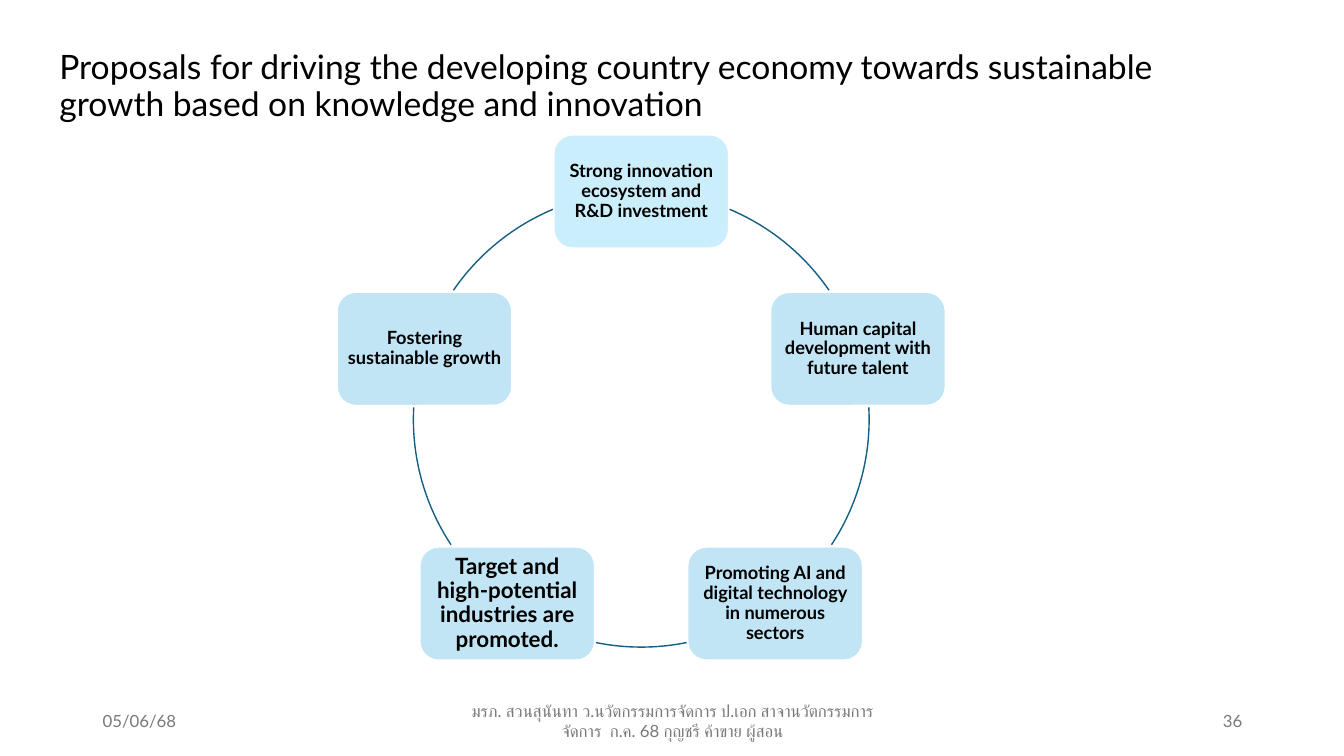
from dataclasses import dataclass
from math import cos, radians, sin

from pptx import Presentation
from pptx.dml.color import RGBColor
from pptx.enum.shapes import MSO_SHAPE
from pptx.enum.text import MSO_ANCHOR, PP_ALIGN
from pptx.util import Pt

ROUNDED, ARC = MSO_SHAPE.ROUNDED_RECTANGLE, MSO_SHAPE.ARC
MIDDLE = MSO_ANCHOR.MIDDLE
LEFT, CENTER, RIGHT = PP_ALIGN.LEFT, PP_ALIGN.CENTER, PP_ALIGN.RIGHT
PX = 9144  # EMU per px, 100 px to the inch
SLIDE_W, SLIDE_H = 1333, 750


@dataclass(frozen=True)
class Theme:
    font: str = "Lato"
    ink: str = "000000"
    muted: str = "797979"
    first_step: str = "CAEEFB"
    step: str = "C1E5F5"
    step_edge: str = "FFFFFF"
    ring: str = "156082"
    title_pt: int = 24
    step_pt: int = 13
    large_step_pt: int = 16
    footer_pt: int = 12
    edge_pt: float = 1.5
    ring_pt: float = 1


THEME = Theme()

TITLE = ("Proposals for driving the developing country economy towards "
         "sustainable growth based on knowledge and innovation")

# Clockwise from the top: wording, type size, inset in px
STEPS = [
    ("Strong innovation ecosystem and R&D investment", THEME.step_pt, 5),
    ("Human capital development with future talent", THEME.step_pt, 5),
    ("Promoting AI and digital technology in numerous sectors", THEME.step_pt, 5),
    ("Target and high-potential industries are promoted.", THEME.large_step_pt, 7),
    ("Fostering sustainable growth", THEME.step_pt, 5),
]

# Visible stretches of the ring between steps, in degrees clockwise from the right
RING_SPANS = [(292.8, 325.5), (357, 33.4), (78.5, 101.5), (146.6, 183), (214.5, 247.2)]

# Wording, alignment, left and width in px
FOOTER = [
    ("05/06/68", LEFT, 92, 300),
    ("มรภ. สวนสุนันทา ว.นวัตกรรมการจัดการ ป.เอก สาจานวัตกรรมการจัดการ  ก.ค. 68 "
     "กุญชรี ค้าขาย ผู้สอน", CENTER, 442, 450),
    ("36", RIGHT, 942, 300),
]


def emu(*lengths):
    return [round(length * PX) for length in lengths]


def rgb(colour):
    return RGBColor.from_string(colour)


def write(frame, wording, size, colour, align=LEFT, bold=False, spacing=1.0):
    frame.word_wrap = True
    frame.vertical_anchor = MIDDLE
    paragraph = frame.paragraphs[0]
    paragraph.text = wording
    paragraph.alignment = align
    paragraph.line_spacing = spacing
    font = paragraph.runs[0].font
    font.name, font.size, font.bold = THEME.font, Pt(size), bold
    font.color.rgb = rgb(colour)


def add_title(slide, box):
    title = slide.shapes.add_textbox(*emu(*box))
    write(title.text_frame, TITLE, THEME.title_pt, THEME.ink, spacing=0.9)


def add_step(slide, box, wording, size, inset, fill):
    step = slide.shapes.add_shape(ROUNDED, *emu(*box))
    step.shadow.inherit = False
    step.fill.solid()
    step.fill.fore_color.rgb = rgb(fill)
    step.line.color.rgb = rgb(THEME.step_edge)
    step.line.width = Pt(THEME.edge_pt)
    frame = step.text_frame
    frame.margin_left = frame.margin_right = inset * PX
    frame.margin_top = frame.margin_bottom = inset * PX
    write(frame, wording, size, THEME.ink, CENTER, bold=True, spacing=0.9)


def add_ring_span(slide, box, start, end):
    span = slide.shapes.add_shape(ARC, *emu(*box))
    span.shadow.inherit = False
    span.fill.background()
    span.line.color.rgb = rgb(THEME.ring)
    span.line.width = Pt(THEME.ring_pt)
    # Arc adjustments count 60000ths of a degree in units of 100000
    span.adjustments[0] = start * 0.6
    span.adjustments[1] = end * 0.6


def add_cycle(slide, box):
    left, top, diameter, _ = box
    radius = diameter / 2
    step_w, step_h = 174, 113
    for i, ((wording, size, inset), span) in enumerate(zip(STEPS, RING_SPANS)):
        angle = radians(360 / len(STEPS) * i - 90)
        step_left = left + radius * (1 + cos(angle)) - step_w / 2
        step_top = top + radius * (1 + sin(angle)) - step_h / 2
        fill = THEME.step if i else THEME.first_step
        add_step(slide, (step_left, step_top, step_w, step_h),
                 wording, size, inset, fill)
        add_ring_span(slide, box, *span)


def add_footer(slide, box):
    left, top, _, height = box
    for wording, align, offset, width in FOOTER:
        part = slide.shapes.add_textbox(*emu(left + offset, top, width, height))
        write(part.text_frame, wording, THEME.footer_pt, THEME.muted, align)


def main():
    deck = Presentation()
    deck.slide_width, deck.slide_height = emu(SLIDE_W, SLIDE_H)
    slide = deck.slides.add_slide(deck.slide_layouts[6])
    add_title(slide, (49, 40, 1150, 93))
    add_footer(slide, (0, 695, SLIDE_W, 40))
    add_cycle(slide, (410, 190, 452, 452))
    deck.save("out.pptx")


if __name__ == "__main__":
    main()
